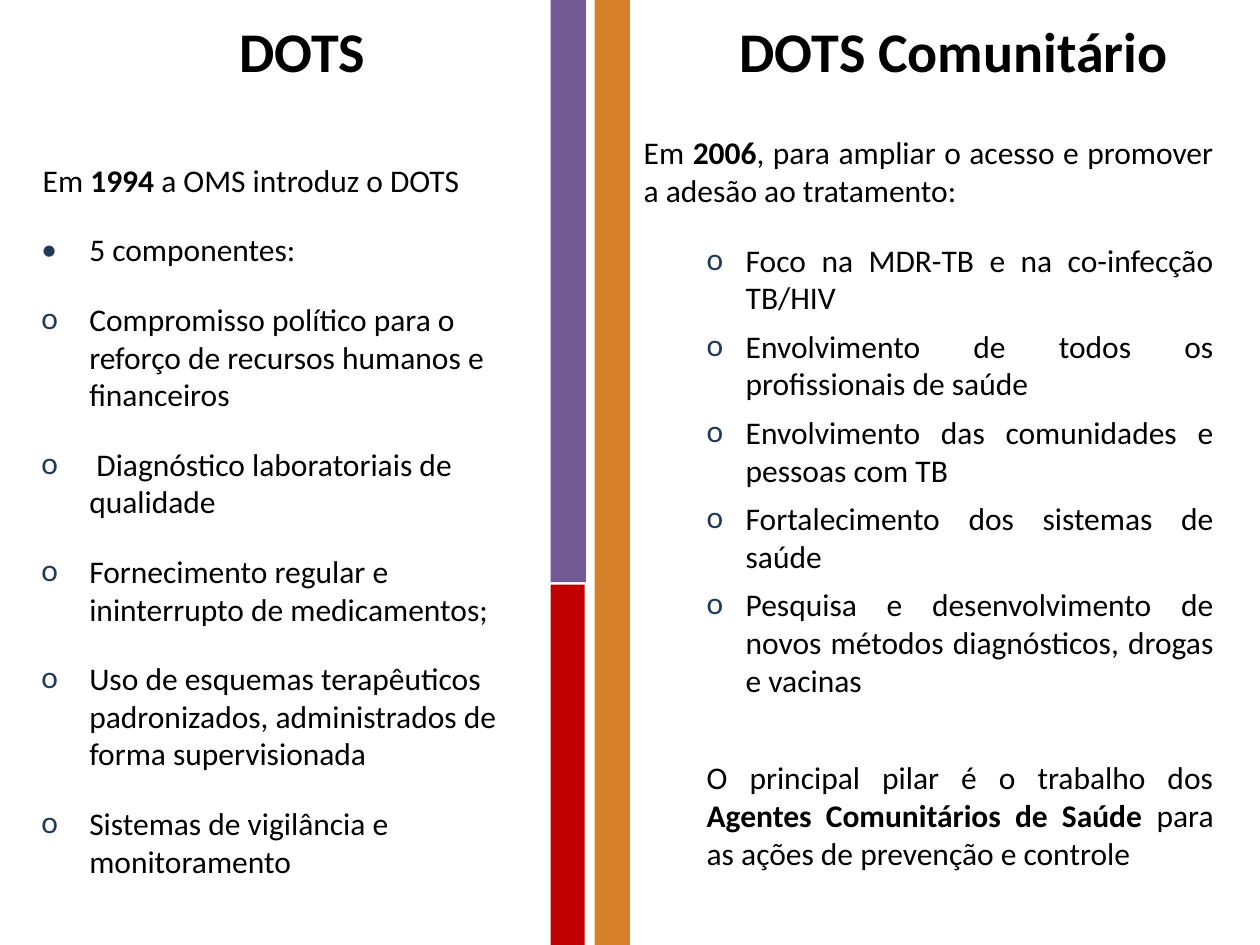
import pptx
import pptx.dml.color
import pptx.enum.shapes
import pptx.enum.text
import pptx.oxml.ns
import pptx.util
from lxml import etree
from pptx.util import Inches

BLACK = pptx.dml.color.RGBColor(0x00, 0x00, 0x00)
NAVY = pptx.dml.color.RGBColor(0x21, 0x3A, 0x59)
ORANGE = pptx.dml.color.RGBColor(0xD6, 0x80, 0x2A)
PURPLE = pptx.dml.color.RGBColor(0x74, 0x5A, 0x94)
RED = pptx.dml.color.RGBColor(0xC0, 0x00, 0x00)
FONT = "Calibri"
ALIGN = pptx.enum.text.PP_ALIGN
ANCHOR = pptx.enum.text.MSO_ANCHOR

COMPONENTS = [
    "Compromisso político para o reforço de recursos humanos e financeiros",
    " Diagnóstico laboratoriais de qualidade",
    "Fornecimento regular e ininterrupto de medicamentos;",
    "Uso de esquemas terapêuticos padronizados, administrados de forma supervisionada",
    "Sistemas de vigilância e monitoramento",
]
COMMUNITY_ACTIONS = [
    "Foco na MDR-TB e na co-infecção TB/HIV",
    "Envolvimento de todos os profissionais de saúde",
    "Envolvimento das comunidades e pessoas com TB",
    "Fortalecimento dos sistemas de saúde",
    "Pesquisa e desenvolvimento de novos métodos diagnósticos, drogas e vacinas",
]


def add_text_box(slide, left, top, width, height, anchor=ANCHOR.TOP):
    """Add a wrapping text box and return its text frame."""
    box = slide.shapes.add_textbox(Inches(left), Inches(top), Inches(width), Inches(height))
    box.text_frame.word_wrap = True
    box.text_frame.vertical_anchor = anchor
    return box.text_frame


def add_run(paragraph, text, size, bold=False):
    """Append one formatted run to a paragraph."""
    run = paragraph.add_run()
    run.text = text
    run.font.name = FONT
    run.font.size = pptx.util.Pt(size)
    run.font.bold = bold
    run.font.color.rgb = BLACK


def add_title(slide, text, left, width):
    """Add a centred column heading."""
    frame = add_text_box(slide, left, -0.19, width, 1.18, ANCHOR.MIDDLE)
    frame.paragraphs[0].alignment = ALIGN.CENTER
    add_run(frame.paragraphs[0], text, 32, bold=True)


def set_bullet(properties, character):
    """Give paragraph properties a navy bullet character."""
    qn = pptx.oxml.ns.qn
    color = etree.SubElement(properties, qn("a:buClr"))
    etree.SubElement(color, qn("a:srgbClr"), val=str(NAVY))
    etree.SubElement(properties, qn("a:buFont"), typeface=FONT)
    etree.SubElement(properties, qn("a:buChar"), char=character)


def add_body_paragraph(frame, runs, margin, indent=0, before=0, align=ALIGN.JUSTIFY, bullet=None):
    """Add a paragraph from (text, bold) pairs, reusing the empty first one."""
    first = frame.paragraphs[0]
    paragraph = frame.add_paragraph() if first.runs else first
    paragraph.alignment = align
    paragraph.space_before = pptx.util.Pt(before)
    paragraph.space_after = pptx.util.Pt(6)
    properties = paragraph._p.get_or_add_pPr()
    properties.set("marL", str(Inches(margin)))
    properties.set("indent", str(Inches(indent)))
    if bullet:
        set_bullet(properties, bullet)
    for text, bold in runs:
        add_run(paragraph, text, 18, bold)


def add_bar(slide, left, top, width, height, color):
    """Add a plain vertical divider bar."""
    bar = slide.shapes.add_shape(
        pptx.enum.shapes.MSO_SHAPE.RECTANGLE,
        Inches(left), Inches(top), Inches(width), Inches(height),
    )
    bar.shadow.inherit = False
    bar.fill.solid()
    bar.fill.fore_color.rgb = color
    bar.line.fill.background()


def add_dots_column(slide):
    """Fill the left column with the five DOTS components."""
    add_title(slide, "DOTS", -0.01, 4.82)
    frame = add_text_box(slide, 0.12, 1.23, 4.25, 5.82)
    introduction = [("Em ", False), ("1994", True), (" a OMS introduz o DOTS", False)]
    add_body_paragraph(frame, introduction, 0.12, before=12)
    items = [("•", "5 componentes:")] + [("o", text) for text in COMPONENTS]
    for bullet, text in items:
        add_body_paragraph(frame, [(text, False)], 0.49, -0.38, 12, ALIGN.LEFT, bullet)


def add_community_column(slide):
    """Fill the right column with the community DOTS actions."""
    add_title(slide, "DOTS Comunitário", 5.14, 4.86)
    frame = add_text_box(slide, 4.89, 1.01, 4.84, 6.21)
    introduction = [
        ("Em ", False),
        ("2006", True),
        (", para ampliar o acesso e promover a adesão ao tratamento:", False),
    ]
    add_body_paragraph(frame, introduction, 0.12, before=18)
    for index, text in enumerate(COMMUNITY_ACTIONS):
        before = 12 if index == 0 else 0
        add_body_paragraph(frame, [(text, False)], 0.93, -0.31, before, bullet="o")
    conclusion = [
        ("O principal pilar é o trabalho dos ", False),
        ("Agentes Comunitários de Saúde ", True),
        ("para as ações de prevenção e controle", False),
    ]
    add_body_paragraph(frame, conclusion, 0.62, before=28)


def main():
    """Build and save the slide."""
    presentation = pptx.Presentation()
    presentation.slide_width = Inches(10)
    presentation.slide_height = Inches(7.5)
    slide = presentation.slides.add_slide(presentation.slide_layouts[6])
    add_dots_column(slide)
    add_bar(slide, 4.72, 0, 0.28, 7.5, ORANGE)
    add_bar(slide, 4.37, 0, 0.28, 4.62, PURPLE)
    add_bar(slide, 4.37, 4.64, 0.27, 2.86, RED)
    add_community_column(slide)
    presentation.save("out.pptx")


if __name__ == "__main__":
    main()
